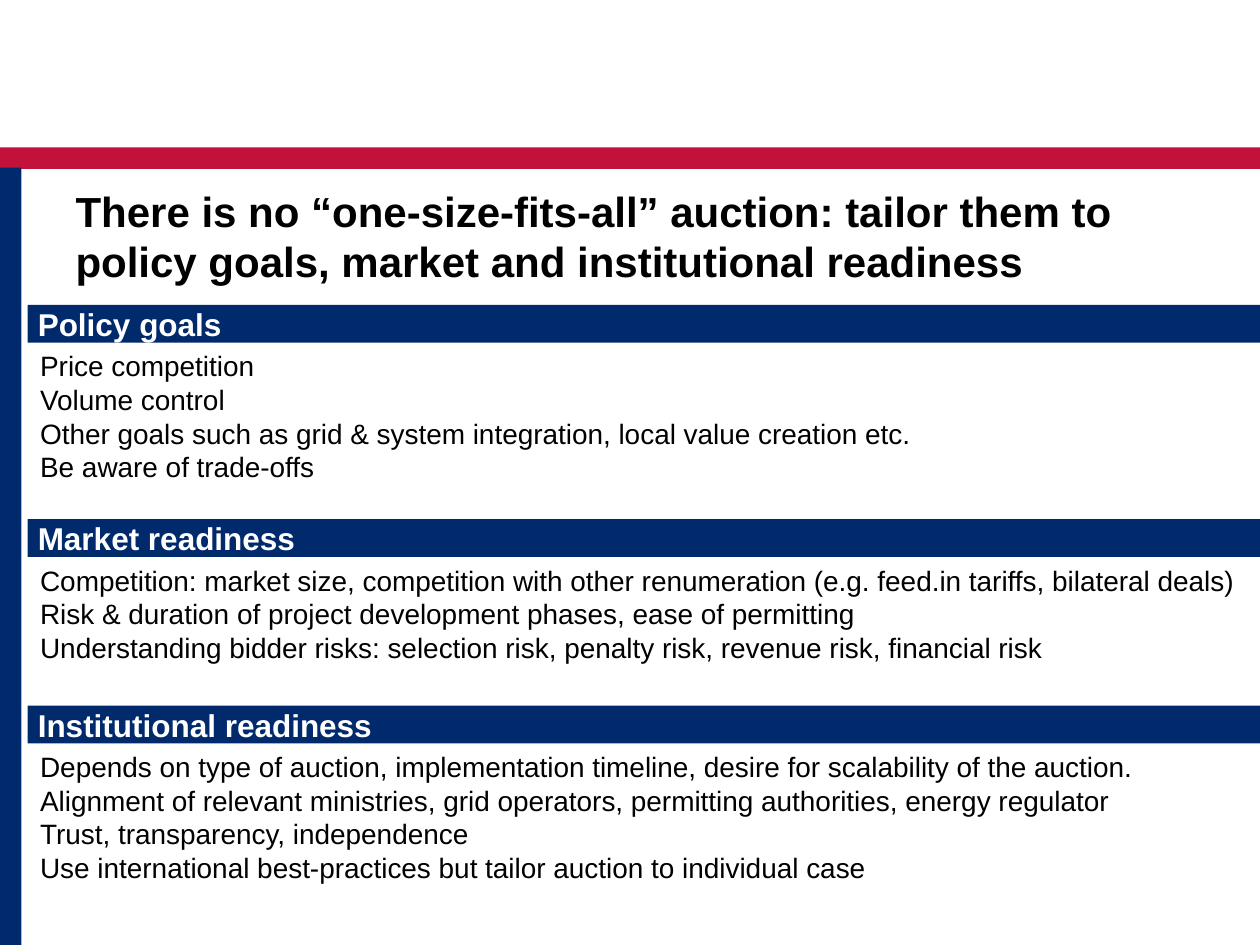
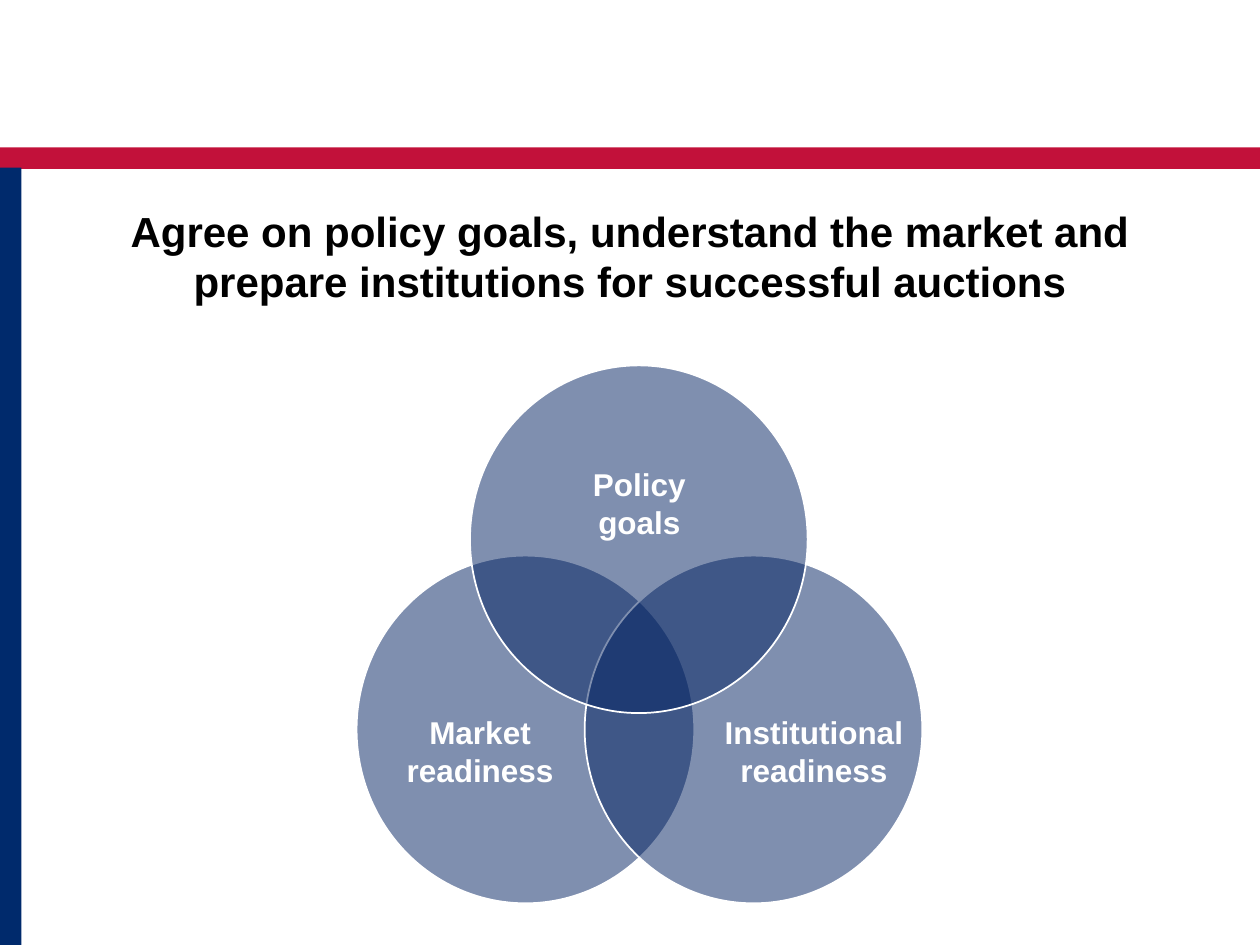
from lxml import etree
from pptx import Presentation
from pptx.dml import color
from pptx.enum import shapes, text
from pptx.oxml import ns
from pptx.util import Inches, Pt

FONT = "Arial"
NAVY = "002A6C"
VENN_BLUE = "002060"
RED = "C2113A"
WHITE = "FFFFFF"
BLACK = "000000"

HEADING_LEFT = 0.22
HEADING_WIDTH = 9.78
HEADING_HEIGHT = 0.3
CIRCLE_WIDTH = 2.68
CIRCLE_HEIGHT = 2.76
LABEL_HEIGHT = 0.61

SECTIONS = [
    (2.42, 1.18, "Policy goals", [
        "Price competition",
        "Volume control",
        "Other goals such as grid & system integration, local value creation etc.",
        "Be aware of trade-offs",
    ]),
    (4.12, 0.91, "Market readiness", [
        "Competition: market size, competition with other renumeration "
        "(e.g. feed.in tariffs, bilateral deals)",
        "Risk & duration of project development phases, ease of permitting",
        "Understanding bidder risks: selection risk, penalty risk, revenue risk, financial risk",
    ]),
    (5.6, 1.18, "Institutional readiness", [
        "Depends on type of auction, implementation timeline, desire for scalability of the auction.",
        "Alignment of relevant ministries, grid operators, permitting authorities, energy regulator",
        "Trust, transparency, independence",
        "Use international best-practices but tailor auction to individual case",
    ]),
]

CIRCLES = [
    ("Market readiness", 2.83, 4.41, 3.12, 5.66, 1.38),
    ("Institutional readiness", 4.64, 4.41, 5.5, 5.66, 1.92),
    ("Policy goals", 3.73, 2.9, 4.46, 3.69, 1.23),
]


def rgb(value):
    return color.RGBColor.from_string(value)


def write(shape, lines, size, ink, bold=False, align=text.PP_ALIGN.LEFT,
          anchor=text.MSO_ANCHOR.TOP, inset=None):
    frame = shape.text_frame
    frame.text = "\n".join(lines)
    frame.word_wrap = True
    frame.auto_size = text.MSO_AUTO_SIZE.NONE
    frame.vertical_anchor = anchor
    if inset is not None:
        frame.margin_left = frame.margin_right = Inches(inset)
        frame.margin_top = frame.margin_bottom = Inches(inset)
    for para in frame.paragraphs:
        para.alignment = align
        for span in para.runs:
            span.font.name = FONT
            span.font.size = Pt(size)
            span.font.bold = bold
            span.font.color.rgb = rgb(ink)


def add_filled(page, kind, left, top, width, height, fill):
    shape = page.shapes.add_shape(
        kind, Inches(left), Inches(top), Inches(width), Inches(height))
    shape.shadow.inherit = False
    shape.fill.solid()
    shape.fill.fore_color.rgb = rgb(fill)
    shape.line.fill.background()
    return shape


def add_bar(page, left, top, width, height, fill):
    return add_filled(page, shapes.MSO_SHAPE.RECTANGLE, left, top, width, height, fill)


def add_text(page, left, top, width, height, lines, **style):
    box = page.shapes.add_textbox(
        Inches(left), Inches(top), Inches(width), Inches(height))
    write(box, lines, **style)


def add_page(deck, layout, title, left, top, width, align):
    page = deck.slides.add_slide(layout)
    heading = page.shapes.title
    heading.left, heading.top = Inches(left), Inches(top)
    heading.width, heading.height = Inches(width), Inches(1.08)
    write(heading, [title], size=24, ink=BLACK, bold=True, align=align)
    return page


def move_bands_to_layout(page):
    bands = [
        add_bar(page, 0, 1.17, 10, 0.17, RED),
        add_bar(page, 0, 1.33, 0.17, 6.17, NAVY),
    ]
    for number, band in enumerate(bands, start=101):
        band.element.nvSpPr.cNvPr.set("id", str(number))
        page.slide_layout.shapes.element.append(band.element)


def add_section(page, top, body_height, heading, lines):
    bar = add_bar(page, HEADING_LEFT, top, HEADING_WIDTH, HEADING_HEIGHT, NAVY)
    write(bar, [heading], size=18, ink=WHITE, bold=True,
          anchor=text.MSO_ANCHOR.MIDDLE, inset=0.08)
    add_text(page, HEADING_LEFT, top + HEADING_HEIGHT, HEADING_WIDTH, body_height,
             lines, size=16, ink=BLACK)


def add_circle(page, label, left, top, label_left, label_top, label_width):
    circle = add_filled(page, shapes.MSO_SHAPE.OVAL, left, top,
                        CIRCLE_WIDTH, CIRCLE_HEIGHT, VENN_BLUE)
    fill = circle.element.spPr.find(ns.qn("a:solidFill"))
    etree.SubElement(fill[0], ns.qn("a:alpha"), val="50000")
    circle.line.color.rgb = rgb(WHITE)
    circle.line.width = Pt(1)
    add_text(page, label_left, label_top, label_width, LABEL_HEIGHT, [label],
             size=18, ink=WHITE, bold=True, align=text.PP_ALIGN.CENTER, inset=0)


def main():
    deck = Presentation()
    deck.slide_width, deck.slide_height = Inches(10), Inches(7.5)
    layout = deck.slide_layouts.get_by_name("Title Only")

    readiness = add_page(
        deck, layout,
        "There is no “one-size-fits-all” auction: tailor them to policy goals, "
        "market and institutional readiness",
        0.5, 1.42, 8.83, text.PP_ALIGN.LEFT)
    move_bands_to_layout(readiness)
    for section in SECTIONS:
        add_section(readiness, *section)

    venn = add_page(
        deck, layout,
        "Agree on policy goals, understand the market and prepare institutions "
        "for successful auctions",
        0.75, 1.58, 8.5, text.PP_ALIGN.CENTER)
    for circle in CIRCLES:
        add_circle(venn, *circle)

    deck.save("out.pptx")


if __name__ == "__main__":
    main()
